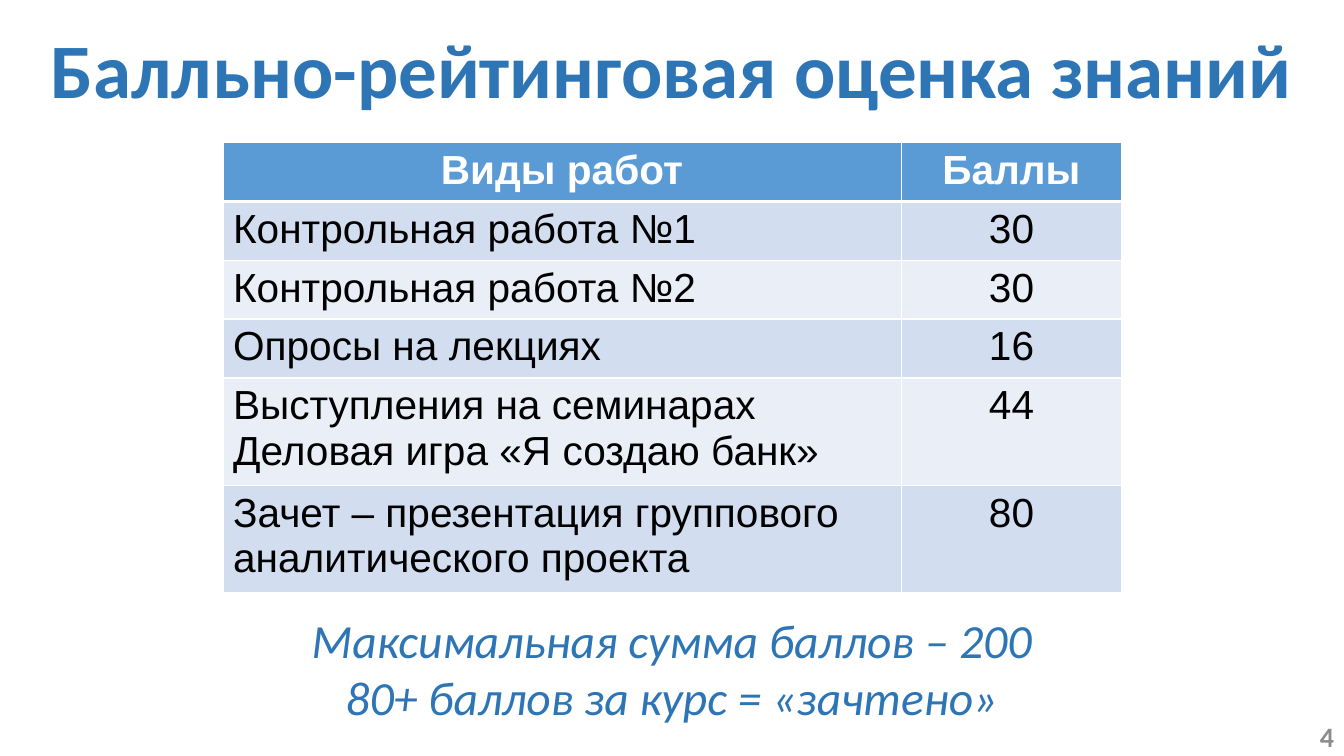
from dataclasses import dataclass

from lxml import etree
from pptx import Presentation
from pptx.dml.color import RGBColor
from pptx.enum.shapes import MSO_SHAPE
from pptx.enum.text import MSO_ANCHOR, PP_ALIGN
from pptx.oxml.ns import qn
from pptx.util import Pt

LEFT, CENTER, RIGHT = PP_ALIGN.LEFT, PP_ALIGN.CENTER, PP_ALIGN.RIGHT
MIDDLE = MSO_ANCHOR.MIDDLE
ROUNDED = MSO_SHAPE.ROUNDED_RECTANGLE
TITLE_ONLY = 5
WHITE, BLUE = "FFFFFF", "2E75B6"
HEADER_FILL, BAND_FILLS = "5B9BD5", ("D2DEEF", "EAEFF7")
COLUMN_WIDTHS = (484.5, 157.5)
SINGLE_HEIGHT, DOUBLE_HEIGHT = 40.6, 74


@dataclass(frozen=True)
class Style:
    """Look of a paragraph."""
    size: float
    color: str
    font: str = "Calibri"
    bold: bool = False
    italic: bool = False


@dataclass(frozen=True)
class Work:
    """One graded kind of work."""
    name: str
    points: str
    height: float = SINGLE_HEIGHT


TITLE = Style(55, BLUE, bold=True)
SUMMARY = Style(34, BLUE, italic=True)
NUMBER = Style(20, "8C8C8C", bold=True)
HEADER = Style(29, WHITE, "Arial", bold=True)
BODY = Style(29, "000000", "Arial")

ROWS = (
    Work("Виды работ", "Баллы"),
    Work("Контрольная работа №1", "30"),
    Work("Контрольная работа №2", "30"),
    Work("Опросы на лекциях", "16"),
    Work("Выступления на семинарах\nДеловая игра «Я создаю банк»", "44", DOUBLE_HEIGHT),
    Work("Зачет – презентация группового аналитического проекта", "80", DOUBLE_HEIGHT),
)


def rgb(value: str) -> RGBColor:
    """Turn a hex string into a colour."""
    return RGBColor.from_string(value)


def write(frame, text: str, style: Style, align) -> None:
    """Fill a text frame, one paragraph per line."""
    frame.word_wrap = True
    frame.text = text
    for para in frame.paragraphs:
        para.alignment = align
        font = para.font
        font.name, font.size = style.font, Pt(style.size)
        font.bold, font.italic = style.bold, style.italic
        font.color.rgb = rgb(style.color)


def add_borders(cell, top: float, bottom: float) -> None:
    """Draw white lines on the four sides of a cell."""
    properties = cell._tc.get_or_add_tcPr()
    for side, width in (("L", 1), ("R", 1), ("T", top), ("B", bottom)):
        line = etree.SubElement(properties, qn(f"a:ln{side}"), w=str(Pt(width)))
        fill = etree.SubElement(line, qn("a:solidFill"))
        etree.SubElement(fill, qn("a:srgbClr"), val=WHITE)


def add_title(page) -> None:
    """Place and format the slide title."""
    title = page.shapes.title
    title.left, title.top, title.width, title.height = Pt(27.4), Pt(0), Pt(904.3), Pt(104.4)
    frame = title.text_frame
    frame.margin_left = frame.margin_right = Pt(0)
    frame.vertical_anchor = MIDDLE
    write(frame, "Балльно-рейтинговая оценка знаний", TITLE, CENTER)
    frame.paragraphs[0].line_spacing = 0.9


def add_scores(page) -> None:
    """Build the table of works and points."""
    height = sum(work.height for work in ROWS)
    table = page.shapes.add_table(
        len(ROWS), len(COLUMN_WIDTHS), Pt(159.3), Pt(101.8), Pt(sum(COLUMN_WIDTHS)), Pt(height)
    ).table
    for column, width in zip(table.columns, COLUMN_WIDTHS):
        column.width = Pt(width)
    for index, work in enumerate(ROWS):
        table.rows[index].height = Pt(work.height)
        is_header = index == 0
        fill = HEADER_FILL if is_header else BAND_FILLS[(index - 1) % 2]
        for column, text in enumerate((work.name, work.points)):
            cell = table.cell(index, column)
            add_borders(cell, 3 if index == 1 else 1, 3 if is_header else 1)
            cell.fill.solid()
            cell.fill.fore_color.rgb = rgb(fill)
            align = CENTER if is_header or column else LEFT
            write(cell.text_frame, text, HEADER if is_header else BODY, align)


def add_summary(page) -> None:
    """Add the rounded box with the total and the pass mark."""
    box = page.shapes.add_shape(ROUNDED, Pt(66.2), Pt(427.7), Pt(827.3), Pt(99.4))
    box.shadow.inherit = False
    box.fill.solid()
    box.fill.fore_color.rgb = rgb(WHITE)
    box.line.fill.background()
    box.text_frame.vertical_anchor = MIDDLE
    text = "Максимальная сумма баллов – 200\n80+ баллов за курс = «зачтено»"
    write(box.text_frame, text, SUMMARY, CENTER)


def add_page_number(page) -> None:
    """Add the page number in the lower right corner."""
    box = page.shapes.add_textbox(Pt(744), Pt(511.2), Pt(216), Pt(28.8))
    box.text_frame.vertical_anchor = MIDDLE
    write(box.text_frame, "4", NUMBER, RIGHT)


def main() -> None:
    """Build and save the deck."""
    deck = Presentation()
    deck.slide_width, deck.slide_height = Pt(960), Pt(540)
    page = deck.slides.add_slide(deck.slide_layouts[TITLE_ONLY])
    add_page_number(page)
    add_title(page)
    add_scores(page)
    add_summary(page)
    deck.save("out.pptx")


if __name__ == "__main__":
    main()
